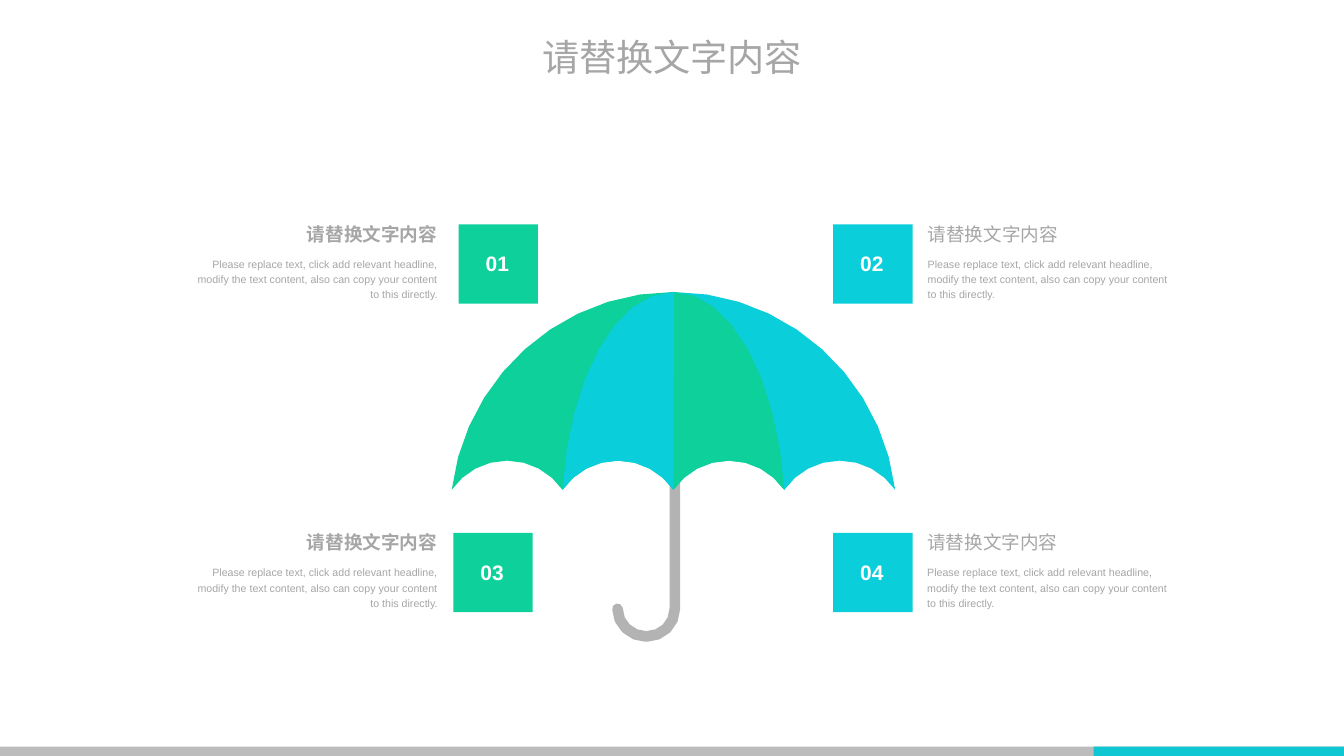
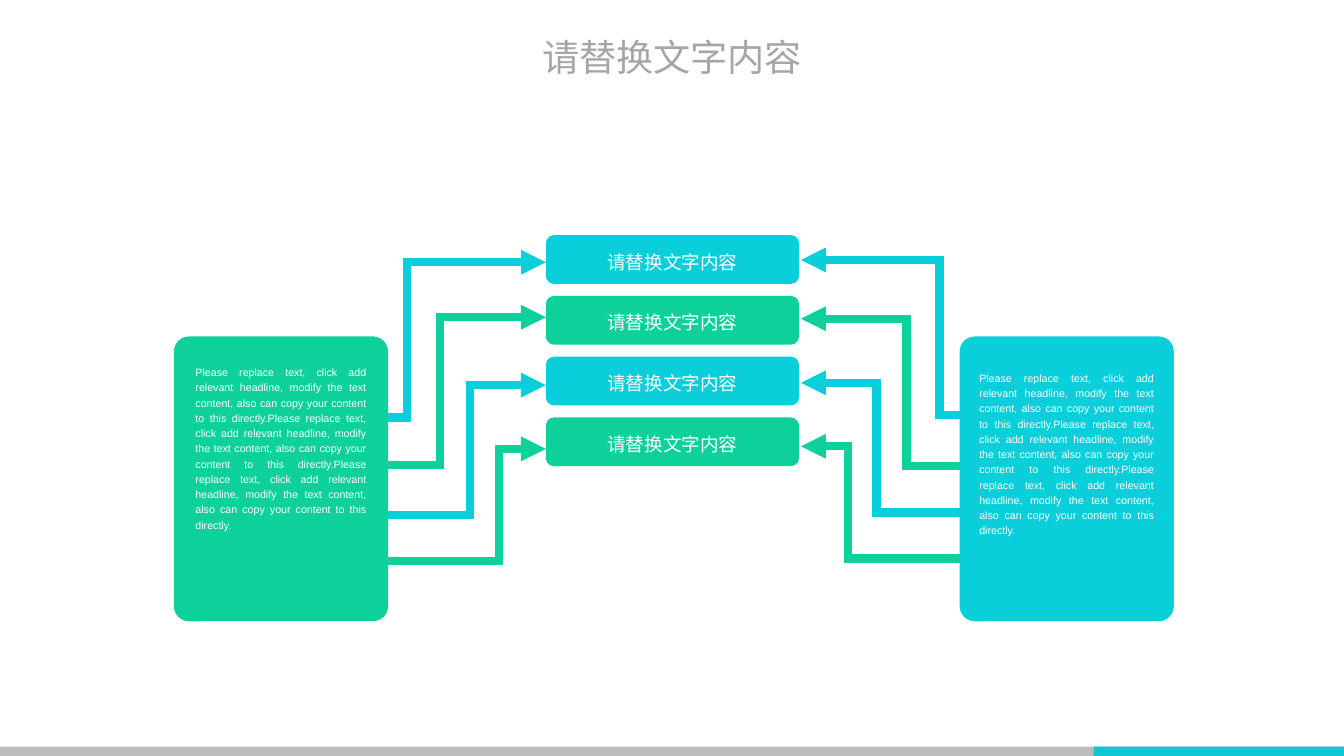
import dataclasses
import math

import lxml.etree
import pptx
import pptx.dml.color
import pptx.enum.shapes
import pptx.enum.text
import pptx.oxml.ns
import pptx.util

ALIGN = pptx.enum.text.PP_ALIGN
ANCHOR = pptx.enum.text.MSO_ANCHOR
SHAPE = pptx.enum.shapes.MSO_SHAPE
qn = pptx.oxml.ns.qn

# Grid: square cells of a tenth of an inch.
CELL = 0.1
COLUMNS, ROWS = 140.6, 79.1
AXIS = 70.45

HEADING = "请替换文字内容"
BODY = ("Please replace text, click add relevant headline, modify the text "
        "content, also can copy your content to this directly.")


@dataclasses.dataclass(frozen=True)
class Theme:
    font: str = "Arial"
    green: str = "0DD09B"
    cyan: str = "0ACEDA"
    gray: str = "A6A6A6"
    white: str = "FFFFFF"
    handle: str = "B3B3B3"
    band: str = "BCBCBC"
    band_accent: str = "0FC7D3"
    title_size: float = 28
    number_size: float = 15.8
    heading_size: float = 14
    body_size: float = 8
    handle_width: float = 8
    arrow_width: float = 6.25


THEME = Theme()


def cells(count):
    return pptx.util.Inches(count * CELL)


def rgb(color):
    return pptx.dml.color.RGBColor.from_string(color)


def write_text(frame, text, *, size, color, bold=False, align=ALIGN.LEFT,
               anchor=ANCHOR.TOP, insets=(0, 0, 0, 0), spacing=1.2,
               before=0, grow=False):
    """Fill a text frame; insets are left, top, right, bottom in cells."""
    frame.word_wrap = True
    frame.vertical_anchor = anchor
    if grow:
        frame.auto_size = pptx.enum.text.MSO_AUTO_SIZE.SHAPE_TO_FIT_TEXT
    (frame.margin_left, frame.margin_top,
     frame.margin_right, frame.margin_bottom) = map(cells, insets)
    paragraph = frame.paragraphs[0]
    paragraph.alignment = align
    paragraph.line_spacing = spacing
    paragraph.space_before = pptx.util.Pt(before)
    run = paragraph.add_run()
    run.text = text
    run.font.name = THEME.font
    run.font.size = pptx.util.Pt(size)
    run.font.bold = bold
    run.font.color.rgb = rgb(color)


def trace(start, segments):
    """Turn points (2 numbers) and cubic curves (6 numbers) into an outline."""
    points = [start]
    for segment in segments:
        if len(segment) == 2:
            points.append(segment)
            continue
        anchors = (points[-1], segment[:2], segment[2:4], segment[4:])
        steps = max(4, round(math.dist(anchors[0], anchors[3]) / 3))
        for step in range(1, steps + 1):
            t = step / steps
            weights = ((1 - t) ** 3, 3 * t * (1 - t) ** 2,
                       3 * t * t * (1 - t), t ** 3)
            points.append(tuple(
                sum(weight * anchor[i] for weight, anchor in zip(weights, anchors))
                for i in (0, 1)))
    return points


class Deck:
    """Holds the presentation and the slide being drawn."""

    def __init__(self):
        self.presentation = pptx.Presentation()
        self.presentation.slide_width = cells(COLUMNS)
        self.presentation.slide_height = cells(ROWS)
        self.slide = None

    def add_slide(self, title):
        layout = self.presentation.slide_layouts[6]
        self.slide = self.presentation.slides.add_slide(layout)
        band_top = 78.13
        for left, right, color in ((0, COLUMNS, THEME.band),
                                   (114.4, COLUMNS, THEME.band_accent)):
            self.box(left, band_top, right - left, ROWS - band_top, color,
                     kind=SHAPE.RECTANGLE)
        self.text(54.7, 2.2, 31.2, 5.5, title, size=THEME.title_size,
                  color=THEME.gray, align=ALIGN.CENTER, spacing=1.3, grow=True)

    def text(self, left, top, width, height, text, **style):
        shape = self.slide.shapes.add_textbox(*map(cells, (left, top, width, height)))
        write_text(shape.text_frame, text, **style)

    def box(self, left, top, width, height, color,
            kind=SHAPE.ROUNDED_RECTANGLE, corner=None):
        shape = self.slide.shapes.add_shape(
            kind, *map(cells, (left, top, width, height)))
        if corner is not None:
            shape.adjustments[0] = corner
        self.paint(shape, color)
        return shape

    def paint(self, shape, color):
        shape.shadow.inherit = False
        shape.fill.solid()
        shape.fill.fore_color.rgb = rgb(color)
        shape.line.fill.background()

    def outline(self, points, side=1, closed=True):
        """Freeform from points measured from the axis; side -1 mirrors it."""
        corners = [(cells(AXIS + side * x), cells(y)) for x, y in points]
        builder = self.slide.shapes.build_freeform(*corners[0], scale=1.0)
        builder.add_line_segments(corners[1:], close=closed)
        return builder.convert_to_shape()

    def stroke(self, points, color, width):
        shape = self.outline(points, closed=False)
        shape.shadow.inherit = False
        shape.fill.background()
        shape.line.color.rgb = rgb(color)
        shape.line.width = pptx.util.Pt(width)
        shape.element.spPr.find(qn("a:ln")).set("cap", "rnd")

    def bent_arrow(self, start, end, lane, color):
        """Elbow arrow whose upright part stands at column lane."""
        connector = self.slide.shapes.add_connector(
            pptx.enum.shapes.MSO_CONNECTOR.ELBOW, *map(cells, start + end))
        connector.line.color.rgb = rgb(color)
        connector.line.width = pptx.util.Pt(THEME.arrow_width)
        properties = connector.element.spPr
        guides = properties.find(qn("a:prstGeom")).get_or_add_avLst()
        turn = round(100000 * (lane - start[0]) / (end[0] - start[0]))
        lxml.etree.SubElement(guides, qn("a:gd"), name="adj1", fmla=f"val {turn}")
        line = properties.find(qn("a:ln"))
        lxml.etree.SubElement(line, qn("a:miter"), lim="800000")
        lxml.etree.SubElement(line, qn("a:tailEnd"), type="triangle")
        lxml.etree.SubElement(properties, qn("a:effectLst"))

    def callout(self, number, top, badge_left, text_left, color, on_left):
        badge_top = top + 1.78
        self.box(badge_left, badge_top, 8.3, 8.3, color, corner=0)
        self.text(badge_left + 0.7, badge_top + 1.05, 6.7, 5.5, number,
                  size=THEME.number_size, color=THEME.white, bold=True,
                  align=ALIGN.CENTER, anchor=ANCHOR.MIDDLE,
                  insets=(0, 1.1, 0, 1.1))
        align = ALIGN.RIGHT if on_left else ALIGN.LEFT
        heading_left = text_left + 10.95 if on_left else text_left
        self.text(heading_left, top, 15 if on_left else 17.6, 3.9, HEADING,
                  size=THEME.heading_size, color=THEME.gray, bold=on_left,
                  align=align, insets=(0, 1.15, 0, 1.15))
        self.text(text_left, top + 5, 26 if on_left else 26.3, 6.9, BODY,
                  size=THEME.body_size, color=THEME.gray, align=align)

    def umbrella(self):
        top, hem, arch, rib = 30.55, 51.25, 48.2, 11.6
        hook_top, hook_bottom = 63.7, 66.6
        handle = trace((-5.85, hook_top), [
            (-5.85, 65.3, -4.45, hook_bottom, -2.85, hook_bottom),
            (-1.15, hook_bottom, 0.15, 65.3, 0.15, hook_top),
            (0.15, 39.9)])
        self.stroke(handle, THEME.handle, THEME.handle_width)

        def scallop(x):
            return [(x + 1.3, 49.4, x + 3.4, arch, x + rib / 2, arch),
                    (x + rib - 3.4, arch, x + rib - 1.3, 49.4, x + rib, hem)]

        outer = trace((0, top), [(0, hem), *scallop(0), *scallop(rib),
                                 (21.8, 39.6, 11.9, top, 0, top)])
        inner = trace((0, top), [(0, hem), *scallop(0),
                                 (10.9, 39.6, 6, top, 0, top)])
        for panel, side, color in ((outer, 1, THEME.cyan), (outer, -1, THEME.green),
                                   (inner, -1, THEME.cyan), (inner, 1, THEME.green)):
            self.paint(self.outline(panel[:-1], side), color)

    def text_panel(self, left, color, text_left, text_top, text_width):
        self.box(left, 35.2, 22.4, 29.8, color, corner=0.07)
        self.text(text_left, text_top, text_width, 17.7, BODY * 3,
                  size=THEME.body_size, color=THEME.white, align=ALIGN.JUSTIFY,
                  before=1.6, grow=True)


def umbrella_slide(deck):
    deck.add_slide(HEADING)
    deck.umbrella()
    row_tops = (21.7, 53.98)
    left_badges, right_texts = (47.98, 47.43), (97.05, 97)
    for row, top in enumerate(row_tops):
        deck.callout(f"{2 * row + 1:02}", top, left_badges[row], 19.8,
                     THEME.green, on_left=True)
        deck.callout(f"{2 * row + 2:02}", top, 87.17, right_texts[row],
                     THEME.cyan, on_left=False)


def flow_slide(deck):
    deck.add_slide(HEADING)
    bar_left, bar_width = 57.1, 26.5
    colors = (THEME.cyan, THEME.green) * 2
    # Start column, lane column, then start and end rows on the left and right.
    routes = ((30.9, 42.6, (43.7, 27.45), (43.4, 27.2)),
              (31.7, 46.05, (48.65, 33.2), (48.8, 33.35)),
              (31.6, 49.2, (53.9, 40.3), (53.63, 40.05)),
              (31.6, 52.2, (58.7, 46.97), (58.45, 46.7)))
    for index, (route, color) in enumerate(zip(routes, colors)):
        start, lane, left_rows, right_rows = route
        deck.bent_arrow((start, left_rows[0]), (bar_left, left_rows[1]), lane, color)
        deck.bent_arrow((2 * AXIS - start, right_rows[0]),
                        (2 * AXIS - bar_left, right_rows[1]),
                        2 * AXIS - lane, color)
        bar = deck.box(bar_left, 24.6 + 6.36 * index, bar_width, 5.1, color)
        write_text(bar.text_frame, HEADING, size=THEME.heading_size,
                   color=THEME.white, align=ALIGN.CENTER, anchor=ANCHOR.MIDDLE,
                   insets=(1, 0.5, 1, 0.5))
    deck.text_panel(18.2, THEME.green, 20.45, 38.04, 17.9)
    deck.text_panel(100.4, THEME.cyan, 102.45, 38.64, 18.3)


def main():
    deck = Deck()
    umbrella_slide(deck)
    flow_slide(deck)
    deck.presentation.save("out.pptx")


if __name__ == "__main__":
    main()
